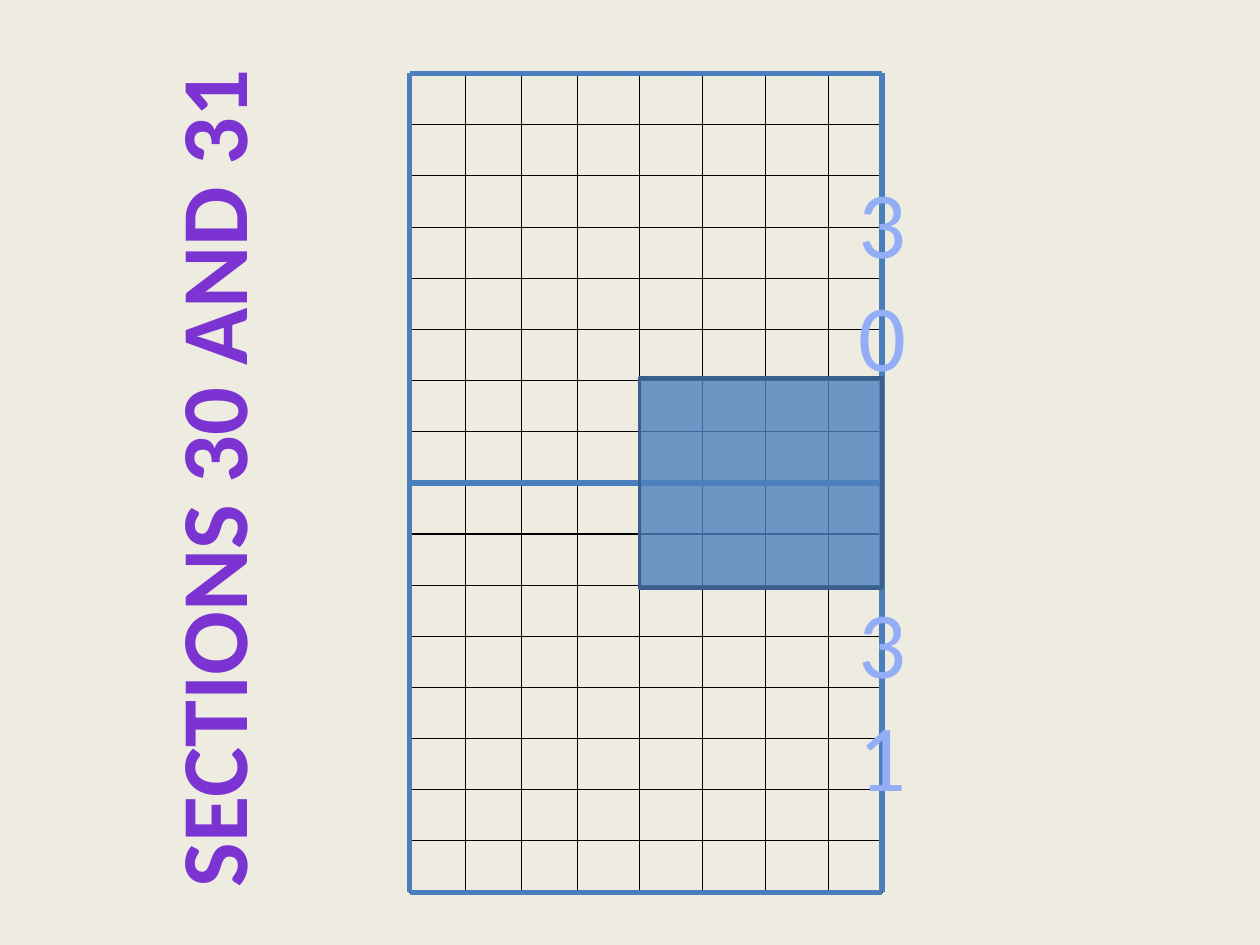
from lxml.etree import SubElement
from pptx import Presentation
from pptx.dml.color import RGBColor
from pptx.enum.shapes import MSO_CONNECTOR as CONN, MSO_SHAPE as SHAPE
from pptx.enum.text import PP_ALIGN as ALIGN
from pptx.oxml.ns import qn
from pptx.util import Pt

COLS = [32, 32, 32, 35.5, 36, 36, 36, 30.5]
ROWS = 16
HEAVY_ROWS = {0, 8, 9, ROWS}
HEAVY_COLS = {0, len(COLS)}


def rgb(value):
    """Turn a hex string into a colour."""
    return RGBColor.from_string(value)


def set_border(cell, side, width):
    """Draw one black border of a table cell."""
    ln = SubElement(cell._tc.get_or_add_tcPr(), qn("a:ln" + side), w=str(Pt(width)))
    fill = SubElement(ln, qn("a:solidFill"))
    SubElement(fill, qn("a:srgbClr"), val="000000")


def add_grid(s, x, y, w, h):
    """Add the table of lots covering both sections."""
    tbl = s.shapes.add_table(ROWS, len(COLS), Pt(x), Pt(y), Pt(w), Pt(h)).table
    tbl.first_row = tbl.horz_banding = False
    for col, width in zip(tbl.columns, COLS):
        col.width = Pt(width)
    for i, row in enumerate(tbl.rows):
        row.height = Pt(h / ROWS)
        for j, cell in enumerate(row.cells):
            cell.margin_top = cell.margin_bottom = 0
            edges = {"L": j in HEAVY_COLS, "R": j + 1 in HEAVY_COLS,
                     "T": i in HEAVY_ROWS, "B": i + 1 in HEAVY_ROWS}
            for side, heavy in edges.items():
                set_border(cell, side, 1 if heavy else 0.5)
            cell.fill.background()


def add_line(s, x1, y1, x2, y2):
    """Add one thick section boundary."""
    line = s.shapes.add_connector(CONN.STRAIGHT, Pt(x1), Pt(y1), Pt(x2), Pt(y2))
    line.line.color.rgb = rgb("4B7EBC")
    line.line.width = Pt(3.25)
    SubElement(line._element.spPr, qn("a:effectLst"))


def add_boundaries(s, x, y, w, h):
    """Outline the two stacked sections."""
    mid = y + h / 2
    for side in (x, x + w):
        add_line(s, side, y, side, mid)
        add_line(s, side, mid - 6, side, y + h)
    for level in (y, mid, y + h):
        add_line(s, x + w, level, x, level)


def add_label(s, text, x, y, w, h, color, bold=False, wrap=True, rotation=0):
    """Add large centred text."""
    sp = s.shapes.add_textbox(Pt(x), Pt(y), Pt(w), Pt(h))
    sp.rotation = rotation
    tf = sp.text_frame
    tf.word_wrap = wrap
    p = tf.paragraphs[0]
    p.text = text
    p.alignment = ALIGN.CENTER
    p.font.name = "Calibri"
    p.font.size = Pt(54)
    p.font.bold = bold
    p.font.color.rgb = rgb(color)


def add_highlight(s, x, y, w, h):
    """Add the translucent block straddling the sections."""
    sp = s.shapes.add_shape(SHAPE.RECTANGLE, Pt(x), Pt(y), Pt(w), Pt(h))
    sp.shadow.inherit = False
    sp.fill.solid()
    sp.fill.fore_color.rgb = rgb("4F81BD")
    color = sp._element.spPr.find(qn("a:solidFill"))[0]
    SubElement(color, qn("a:alpha"), val="80000")
    sp.line.color.rgb = rgb("3A5F8C")
    sp.line.width = Pt(2)


def main():
    """Build and save the slide."""
    prs = Presentation()
    prs.slide_width, prs.slide_height = Pt(720), Pt(540)
    s = prs.slides.add_slide(prs.slide_layouts[6])
    s.background.fill.solid()
    s.background.fill.fore_color.rgb = rgb("EEECE1")
    x, y, w, h = plat = 234, 42, 270, 468
    add_grid(s, *plat)
    add_label(s, "SECTIONS 30 AND 31", -123, 237, 486, 72.7, "7B34D2",
              bold=True, wrap=False, rotation=270)
    add_boundaries(s, *plat)
    for text, top in (("30", 90), ("31", 330)):
        add_label(s, text, x + w - 30, top, 60, 138, "93AEF7")
    add_highlight(s, x + sum(COLS[:4]), 216, sum(COLS[4:]), 120)
    prs.save("out.pptx")


if __name__ == "__main__":
    main()
